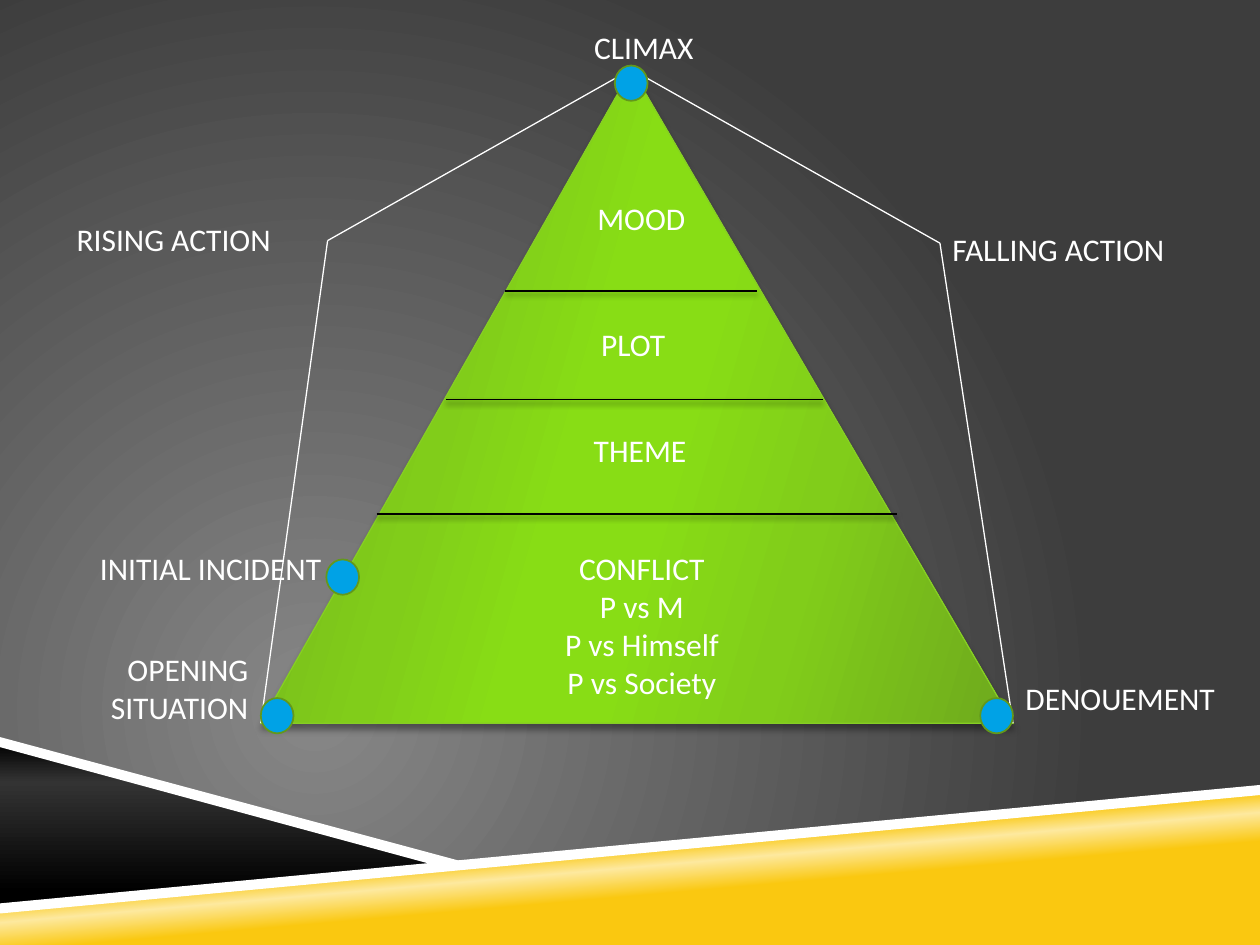
from lxml.etree import SubElement
from pptx import Presentation
from pptx.dml.color import RGBColor
from pptx.enum.shapes import MSO_CONNECTOR, MSO_SHAPE
from pptx.enum.text import MSO_AUTO_SIZE, PP_ALIGN as AL
from pptx.oxml.ns import qn
from pptx.util import Inches, Pt

WHITE, BLACK = "FFFFFF", "000000"


def rgb(code):
    return RGBColor.from_string(code)


def add(parent, tag, **attrs):
    el = SubElement(parent, qn(tag))
    for name, value in attrs.items():
        el.set(name, str(value))
    return el


def set_gradient(fill, root, stops, angle=None, center=None):
    fill.gradient()
    grad = next(root.iter(qn("a:gradFill")))
    for child in list(grad):
        grad.remove(child)
    grad.set("rotWithShape", "1")
    gs_list = add(grad, "a:gsLst")
    for pos, color in stops:
        gs = add(gs_list, "a:gs", pos=pos * 1000)
        add(gs, "a:srgbClr", val=color)
    if center:
        path = add(grad, "a:path", path="circle")
        sides = {side: v * 1000 for side, v in zip("ltrb", center)}
        add(path, "a:fillToRect", **sides)
    else:
        add(grad, "a:lin", ang=angle * 60000, scaled=0)


def set_shadow(sp, blur=None, dist=None):
    sp_pr = sp._element.spPr
    for old in sp_pr.findall(qn("a:effectLst")):
        sp_pr.remove(old)
    effects = add(sp_pr, "a:effectLst")
    if blur:
        outer = add(effects, "a:outerShdw", blurRad=Pt(blur), dist=Pt(dist),
                    dir=90 * 60000, rotWithShape=0)
        add(add(outer, "a:srgbClr", val=BLACK), "a:alpha", val=40000)


class Deck:
    font, size, color = "Calibri", 18, WHITE

    def __init__(self, width, height):
        self.prs = Presentation()
        self.prs.slide_width, self.prs.slide_height = Inches(width), Inches(height)
        self.slide = self.prs.slides.add_slide(self.prs.slide_layouts[6])
        self.shapes = self.slide.shapes

    def background(self, stops, center):
        set_gradient(self.slide.background.fill, self.slide._element, stops, center=center)

    def paint(self, sp, fill, angle=None, line=None, width=1):
        sp.shadow.inherit = False
        if angle is None:
            sp.fill.solid()
            sp.fill.fore_color.rgb = rgb(fill)
        else:
            set_gradient(sp.fill, sp._element, fill, angle)
        if line:
            sp.line.color.rgb = rgb(line)
            sp.line.width = Pt(width)
        else:
            sp.line.fill.background()
        return sp

    def polygon(self, points, fill, angle=None):
        pts = [(Inches(x), Inches(y)) for x, y in points]
        fb = self.shapes.build_freeform(*pts[0], scale=1.0)
        fb.add_line_segments(pts[1:], close=True)
        return self.paint(fb.convert_to_shape(), fill, angle)

    def shape(self, kind, x, y, w, h, fill, **style):
        sp = self.shapes.add_shape(kind, Inches(x), Inches(y), Inches(w), Inches(h))
        return self.paint(sp, fill, **style)

    def text(self, text, x, y, w, h=0.4, align=AL.LEFT):
        sp = self.shapes.add_textbox(Inches(x), Inches(y), Inches(w), Inches(h))
        tf = sp.text_frame
        tf.word_wrap = True
        tf.auto_size = MSO_AUTO_SIZE.SHAPE_TO_FIT_TEXT
        tf.text = text
        for p in tf.paragraphs:
            p.alignment = align
            for r in p.runs:
                r.font.name, r.font.size = self.font, Pt(self.size)
                r.font.color.rgb = rgb(self.color)

    def line(self, start, end, color, width, **shadow):
        cx = self.shapes.add_connector(
            MSO_CONNECTOR.STRAIGHT, *(Inches(v) for v in start + end))
        cx.line.color.rgb = rgb(color)
        cx.line.width = Pt(width)
        set_shadow(cx, **shadow)


def main():
    deck = Deck(10, 7.5)
    deck.background([(0, "878787"), (100, "3D3D3D")], center=(50, 100, 100, 50))

    deck.polygon([(0, 7.21), (10, 6.27), (10, 7.5), (0, 7.5)],
                 [(39, "FAC810"), (50, "FDE99F"), (58, "FAC810")], 265)
    deck.polygon([(0, 5.89), (3.59, 6.85), (0, 7.21)],
                 [(0, BLACK), (24, "333333"), (90, BLACK)], 90)
    deck.polygon([(10, 6.23), (0, 7.17), (0, 7.25), (10, 6.31)], WHITE)
    deck.polygon([(0, 5.85), (0, 5.93), (3.5, 6.88), (3.75, 6.86)], WHITE)

    greens = [(0, "6EA91D"), (30, "81CD1A"), (45, "88DD15"),
              (55, "88DD15"), (73, "81CD1A"), (100, "6EA91D")]
    pyramid = deck.shape(MSO_SHAPE.ISOSCELES_TRIANGLE, 2.07, 0.55, 5.97, 5.19,
                         greens, angle=16, line="86CE24", width=0.75)
    pyramid.adjustments[0] = 0.493
    set_shadow(pyramid, blur=4, dist=3.3)

    deck.text("OPENING SITUATION", 0.51, 5.11, 1.56, 0.71, AL.RIGHT)
    deck.text("INITIAL INCIDENT", 0.15, 4.31, 2.5, align=AL.RIGHT)
    deck.text("RISING ACTION", 0.51, 1.7, 2.08)
    deck.text("CLIMAX", 4.42, 0.17, 1.38, align=AL.CENTER)
    deck.text("FALLING ACTION", 7.46, 1.78, 2.25)
    deck.text("DENOUEMENT", 8.04, 5.34, 1.96)

    deck.text("PLOT", 4.54, 2.53, 0.97, align=AL.CENTER)
    deck.text("MOOD", 4.54, 1.53, 1.1, align=AL.CENTER)
    deck.text("CONFLICT\nP vs M\nP vs Himself\nP vs Society",
              4.31, 4.31, 1.57, 1.31, AL.CENTER)
    deck.text("THEME", 4.01, 3.37, 2.14, align=AL.CENTER)

    for left, right, y in [(4.01, 6.01, 2.31), (3.54, 6.53, 3.17), (2.99, 7.12, 4.08)]:
        deck.line((left, y), (right, y), BLACK, 1, blur=3, dist=2)

    apex, rising, falling = (5.01, 0.55), (2.6, 1.91), (7.46, 1.93)
    opening, ending = (2.07, 5.74), (8.04, 5.74)
    for start, end in [(apex, rising), (rising, opening), (apex, falling), (ending, falling)]:
        deck.line(start, end, WHITE, 0.75)

    for x, y in [(2.07, 5.54), (2.59, 4.44), (7.78, 5.54), (4.88, 0.52)]:
        deck.shape(MSO_SHAPE.OVAL, x, y, 0.26, 0.28, "00A2E6", line="63981B")

    deck.prs.save("out.pptx")


if __name__ == "__main__":
    main()
